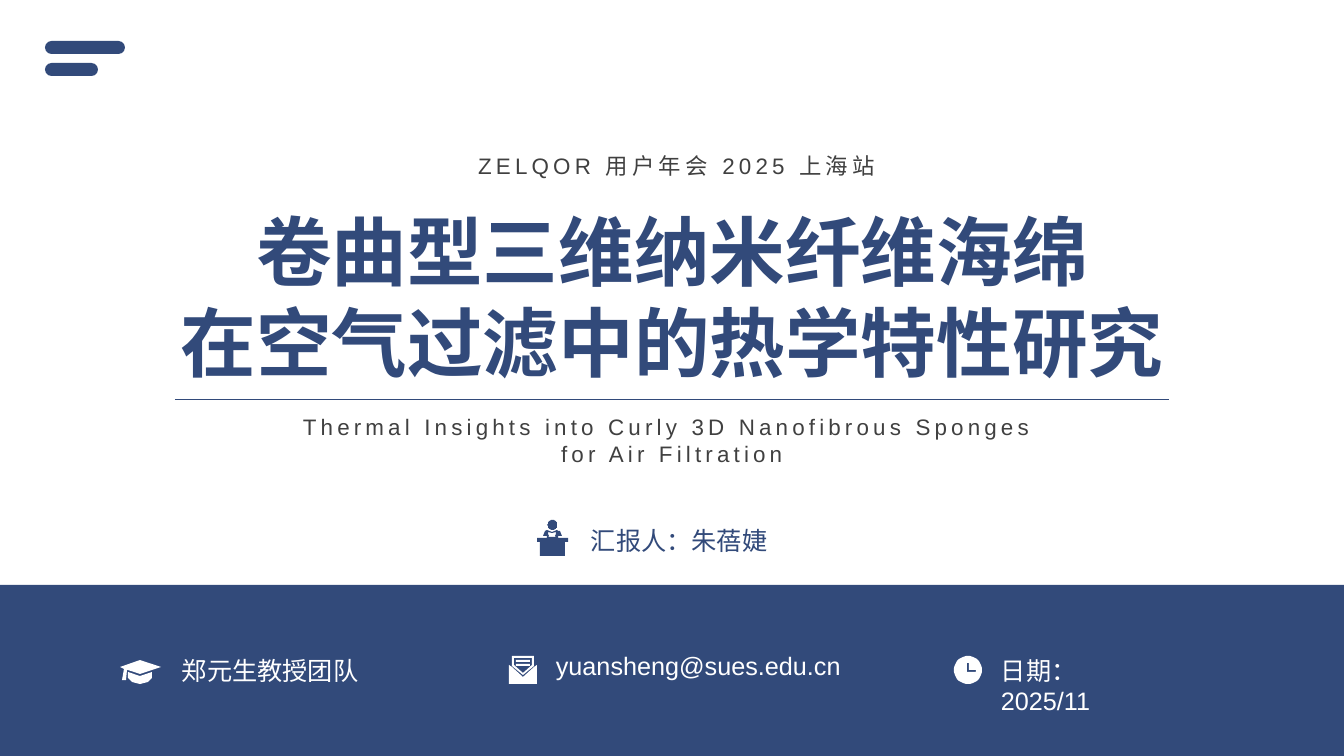
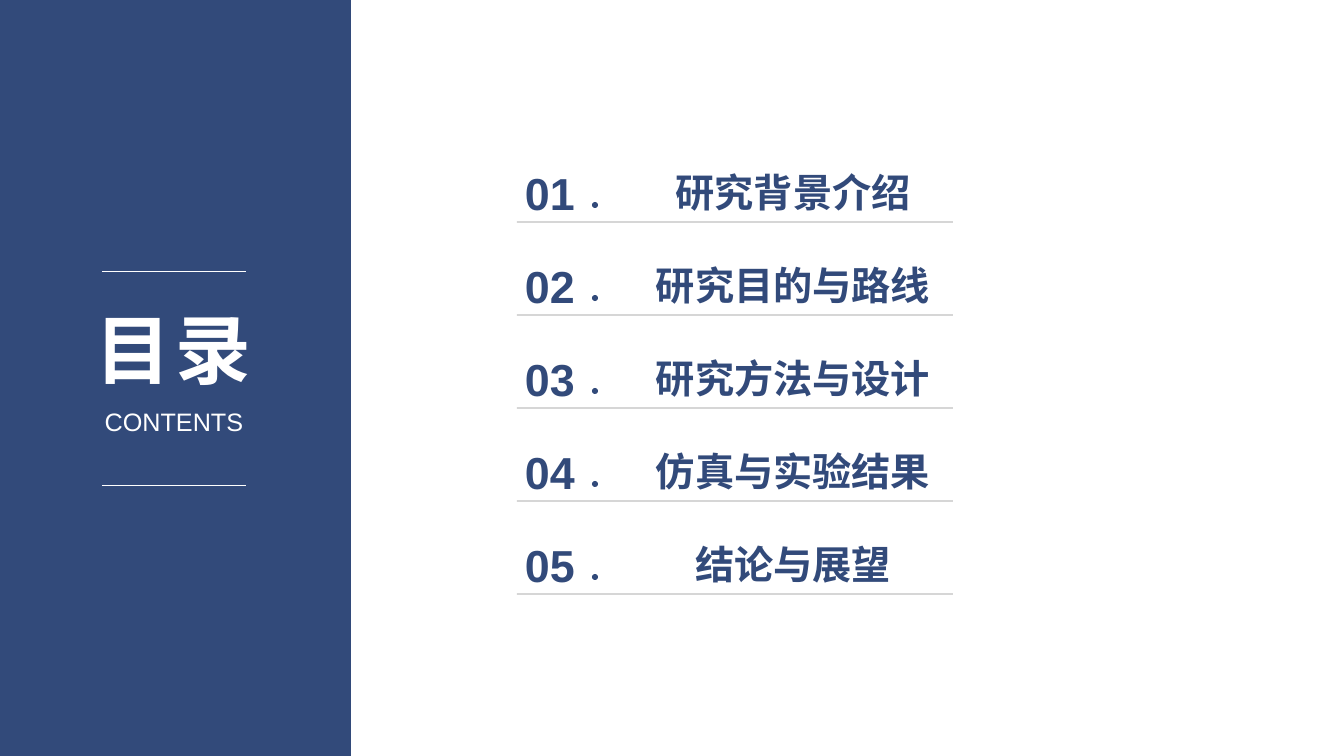
import math
from dataclasses import dataclass
from typing import Any, NamedTuple

import lxml.etree
import pptx
import pptx.dml.color
import pptx.enum.shapes
import pptx.enum.text
import pptx.oxml.ns
import pptx.util

EMU_PER_PX = 914400 / 100.8
SHAPE = pptx.enum.shapes.MSO_SHAPE
ALIGN = pptx.enum.text.PP_ALIGN
ANCHOR = pptx.enum.text.MSO_ANCHOR

Contour = list[tuple[float, float]]


@dataclass(frozen=True)
class Theme:
    navy: str = "324A7A"
    white: str = "FFFFFF"
    grey: str = "404040"
    black: str = "000000"
    font: str = "Arial"
    cover_font: str = "Montserrat"
    title: int = 54
    number: int = 32
    entry: int = 28
    label: int = 18
    subtitle: int = 16
    tracking: int = 3
    rule: float = 0.5
    rule_alpha: int = 45


THEME = Theme()


class Box(NamedTuple):
    left: int
    top: int
    width: int
    height: int


@dataclass(frozen=True)
class TextStyle:
    size: int
    color: str
    bold: bool = False
    font: str = THEME.font
    tracking: int = 0
    align: Any = ALIGN.LEFT
    anchor: Any = ANCHOR.TOP
    wrap: bool = True


@dataclass(frozen=True)
class Label:
    text: str
    box: Box
    color: str
    icon: list[Contour]
    icon_left: int
    icon_top: int
    wrap: bool = False


COVER_TITLE = TextStyle(THEME.title, THEME.navy, True, THEME.cover_font, align=ALIGN.CENTER)
CONTENTS_TITLE = TextStyle(THEME.title, THEME.white, True, tracking=THEME.tracking,
                           align=ALIGN.CENTER, wrap=False)
SUBTITLE = TextStyle(THEME.subtitle, THEME.grey, tracking=THEME.tracking, align=ALIGN.CENTER)
CONTENTS_SUBTITLE = TextStyle(THEME.label, THEME.white, align=ALIGN.CENTER, wrap=False)
NUMBER = TextStyle(THEME.number, THEME.navy, True)
ENTRY = TextStyle(THEME.entry, THEME.navy, True, align=ALIGN.CENTER, anchor=ANCHOR.MIDDLE)


def circle(center_x: float, center_y: float, radius: float) -> Contour:
    angles = [math.radians(degrees) for degrees in range(0, 360, 10)]
    return [(center_x + radius * math.cos(angle), center_y + radius * math.sin(angle))
            for angle in angles]


def bar(left: int, top: int, width: int, height: int) -> Contour:
    right, bottom = left + width, top + height
    return [(left, top), (right, top), (right, bottom), (left, bottom)]


CAP = [
    [(20, 0), (41, 7), (32, 10), (20, 14), (8, 10), (7, 10), (6, 20), (2, 20), (4, 9), (0, 7)],
    [(8, 12), (20, 16), (32, 12), (32, 18), (28, 22), (20, 24), (12, 22), (8, 18)],
]
SPEAKER = [
    circle(15.5, 5, 5),
    [(10, 10), (15, 12), (20, 10), (21, 11), (23, 11), (25, 16), (21, 16), (21, 18), (31, 18),
     (31, 22), (28, 22), (28, 36), (3, 36), (3, 22), (0, 22), (0, 18), (10, 18), (10, 16),
     (6, 16), (8, 11)],
    [(11, 12), (15, 13), (19, 12), (19, 14), (18, 16), (19, 17), (11, 17), (12, 16), (11, 14)],
]
ENVELOPE = [
    [(0, 9), (3, 11), (14, 21), (25, 11), (28, 9), (28, 28), (0, 28)],
    [(3, 0), (25, 0), (25, 10), (14, 19), (3, 10)],
    [(5, 2), (23, 2), (23, 9), (14, 17), (5, 9)],
    bar(7, 4, 14, 2),
    bar(7, 8, 14, 2),
]
CLOCK = [
    circle(14, 14, 14),
    [(13, 7), (15, 7), (15, 14), (22, 14), (22, 16), (13, 16)],
]

LABELS = [
    Label("郑元生教授团队", Box(172, 650, 197, 40), THEME.white, CAP, 120, 660),
    Label("汇报人：朱蓓婕", Box(581, 520, 197, 40), THEME.navy, SPEAKER, 537, 520),
    Label("日期：2025/11", Box(991, 650, 176, 40), THEME.white, CLOCK, 954, 656, wrap=True),
    Label("yuansheng@sues.edu.cn", Box(546, 645, 525, 40), THEME.white, ENVELOPE, 509, 656,
          wrap=True),
]
ENTRIES = ["研究背景介绍", "研究目的与路线", "研究方法与设计", "仿真与实验结果", "结论与展望"]
FIRST_RULE = 222
ENTRY_PITCH = 93


def px(length: float) -> pptx.util.Emu:
    return pptx.util.Emu(round(length * EMU_PER_PX))


def rgb(color: str) -> pptx.dml.color.RGBColor:
    return pptx.dml.color.RGBColor.from_string(color)


def place(box: Box) -> tuple[pptx.util.Emu, ...]:
    return tuple(px(length) for length in box)


def paint(shape: Any, color: str) -> None:
    shape.shadow.inherit = False
    shape.fill.solid()
    shape.fill.fore_color.rgb = rgb(color)
    shape.line.fill.background()


def add_block(page: Any, box: Box, color: str, kind: Any = SHAPE.RECTANGLE) -> Any:
    block = page.shapes.add_shape(kind, *place(box))
    paint(block, color)
    return block


def add_rule(page: Any, left: int, right: int, top: int, color: str, alpha: int = 100) -> None:
    rule = page.shapes.add_connector(pptx.enum.shapes.MSO_CONNECTOR.STRAIGHT,
                                     px(left), px(top), px(right), px(top))
    rule.line.color.rgb = rgb(color)
    rule.line.width = pptx.util.Pt(THEME.rule)
    properties = rule.element.spPr
    if alpha < 100:
        fill = properties.find(".//" + pptx.oxml.ns.qn("a:srgbClr"))
        lxml.etree.SubElement(fill, pptx.oxml.ns.qn("a:alpha"), val=str(alpha * 1000))
    lxml.etree.SubElement(properties, pptx.oxml.ns.qn("a:effectLst"))


def add_icon(page: Any, contours: list[Contour], left: int, top: int, color: str) -> None:
    first, *others = contours
    builder = page.shapes.build_freeform(*first[0], scale=EMU_PER_PX)
    builder.add_line_segments(first[1:], close=True)
    for contour in others:
        builder.move_to(*contour[0])
        builder.add_line_segments(contour[1:], close=True)
    paint(builder.convert_to_shape(px(left), px(top)), color)


def write(shape: Any, lines: list[str], style: TextStyle) -> None:
    frame = shape.text_frame
    frame.word_wrap = style.wrap
    frame.auto_size = pptx.enum.text.MSO_AUTO_SIZE.SHAPE_TO_FIT_TEXT
    frame.vertical_anchor = style.anchor
    for index, line in enumerate(lines):
        para = frame.add_paragraph() if index else frame.paragraphs[0]
        para.alignment = style.align
        span = para.add_run()
        span.text = line
        span.font.size = pptx.util.Pt(style.size)
        span.font.bold = style.bold
        span.font.color.rgb = rgb(style.color)
        span.font.name = style.font
        properties = span.font._element
        latin = properties.find(pptx.oxml.ns.qn("a:latin"))
        east_asian = lxml.etree.Element(pptx.oxml.ns.qn("a:ea"), typeface=style.font)
        latin.addnext(east_asian)
        if style.tracking:
            properties.set("spc", str(style.tracking * 100))


def add_text(page: Any, box: Box, lines: list[str], style: TextStyle) -> None:
    write(page.shapes.add_textbox(*place(box)), lines, style)


def add_page(deck: Any, band: Box, title_box: Box, title: list[str], style: TextStyle) -> Any:
    page = deck.slides.add_slide(deck.slide_layouts[5])
    heading = page.shapes.title
    heading.left, heading.top, heading.width, heading.height = place(title_box)
    write(heading, title, style)
    heading.element.addprevious(add_block(page, band, THEME.navy).element)
    return page


def add_cover(deck: Any) -> None:
    page = add_page(deck, Box(0, 585, 1344, 171), Box(147, 200, 1050, 193),
                    ["卷曲型三维纳米纤维海绵", "在空气过滤中的热学特性研究"], COVER_TITLE)
    for top, width in ((41, 80), (63, 53)):
        mark = add_block(page, Box(45, top, width, 13), THEME.navy, SHAPE.ROUNDED_RECTANGLE)
        mark.adjustments[0] = 0.5
    add_text(page, Box(348, 147, 657, 37), ["ZELQOR 用户年会 2025 上海站"], SUBTITLE)
    add_rule(page, 175, 1169, 399, THEME.navy)
    add_text(page, Box(213, 408, 918, 65),
             ["Thermal Insights into Curly 3D Nanofibrous Sponges ", "for Air Filtration"],
             SUBTITLE)
    for label in LABELS:
        add_icon(page, label.icon, label.icon_left, label.icon_top, label.color)
        add_text(page, label.box, [label.text],
                 TextStyle(THEME.label, label.color, wrap=label.wrap))


def add_contents(deck: Any) -> None:
    page = add_page(deck, Box(0, 0, 351, 756), Box(83, 298, 181, 102), ["目录"], CONTENTS_TITLE)
    add_text(page, Box(94, 401, 160, 40), ["CONTENTS"], CONTENTS_SUBTITLE)
    for top in (271, 485):
        add_rule(page, 102, 246, top, THEME.white)
    for index, entry in enumerate(ENTRIES):
        rule_top = FIRST_RULE + index * ENTRY_PITCH
        add_text(page, Box(603, rule_top - 59, 380, 57), [entry], ENTRY)
        add_rule(page, 517, 953, rule_top, THEME.black, THEME.rule_alpha)
        add_text(page, Box(515, rule_top - 61, 77, 65), [f"{index + 1:02d}"], NUMBER)
        add_block(page, Box(592, rule_top - 20, 6, 6), THEME.navy, SHAPE.OVAL)


def main() -> None:
    deck = pptx.Presentation()
    deck.slide_width, deck.slide_height = px(1344), px(756)
    add_cover(deck)
    add_contents(deck)
    deck.save("out.pptx")


if __name__ == "__main__":
    main()
